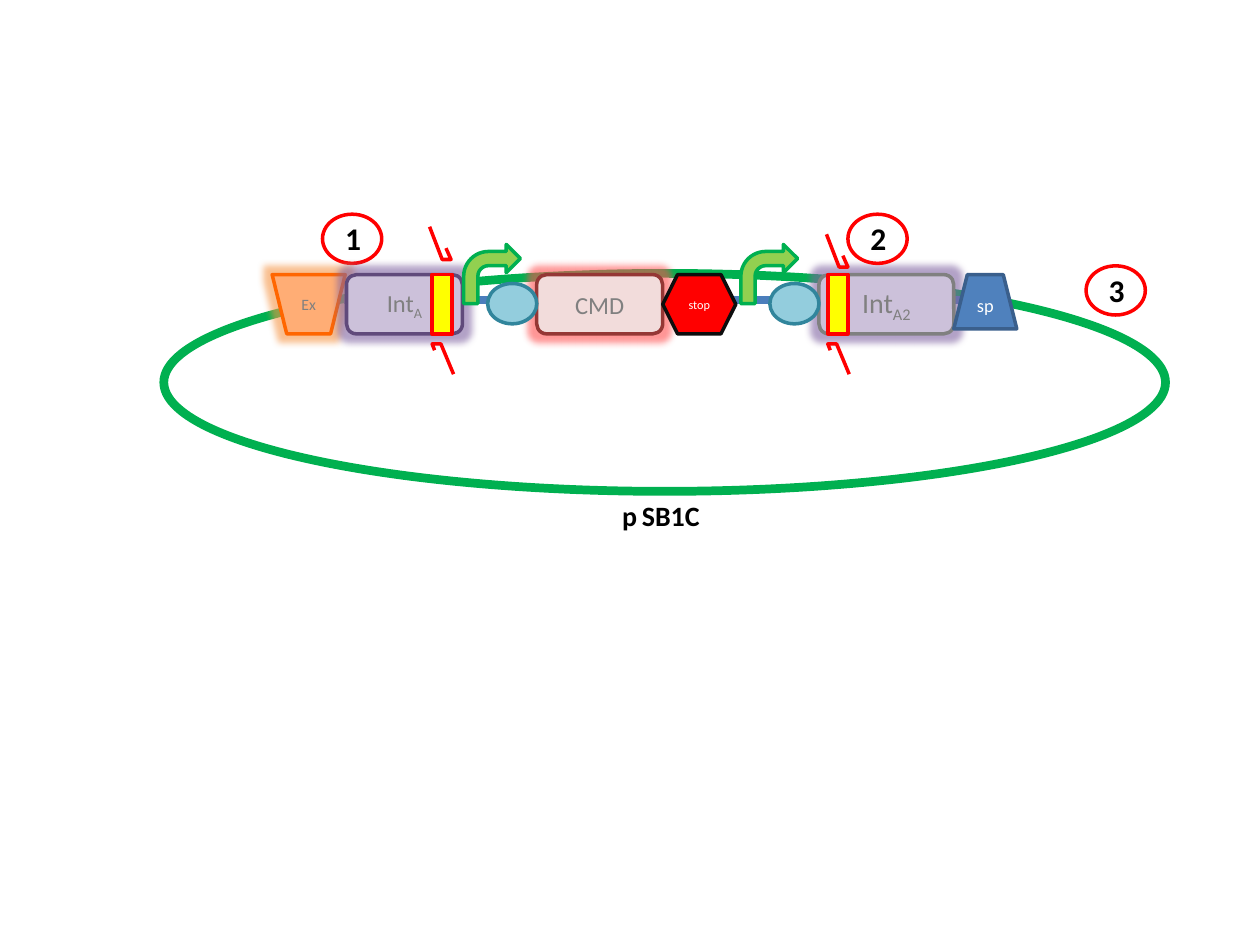
import pptx
import pptx.dml.color
import pptx.enum.shapes
import pptx.enum.text
import pptx.oxml.ns
import pptx.util
from dataclasses import dataclass
from typing import Optional
from lxml import etree

Inches = pptx.util.Inches
Kind = pptx.enum.shapes.MSO_SHAPE
FONT = "Calibri"
RED = "FF0000"
GREEN = "00B050"
GREY = "808080"
PURPLE = "8064A2"


@dataclass
class Part:
    kind: int
    left: float
    top: float
    width: float
    height: float
    fill: Optional[str]
    line: str
    text: str = ""
    subscript: str = ""
    size: float = 14
    color: str = GREY
    glow: Optional[str] = None
    line_width: float = 2


def rgb(value: str) -> pptx.dml.color.RGBColor:
    return pptx.dml.color.RGBColor.from_string(value)


def style_outline(shape, fill: Optional[str], line: str, width: float = 2) -> None:
    shape.shadow.inherit = False
    if fill:
        shape.fill.solid()
        shape.fill.fore_color.rgb = rgb(fill)
    else:
        shape.fill.background()
    shape.line.color.rgb = rgb(line)
    shape.line.width = pptx.util.Pt(width)


def style_font(font, size: float, color: str, bold: bool = False) -> None:
    font.name = FONT
    font.size = pptx.util.Pt(size)
    font.bold = bold
    font.color.rgb = rgb(color)


def add_glow(shape, color: str) -> None:
    qn = pptx.oxml.ns.qn
    effects = shape._element.spPr.find(qn("a:effectLst"))
    glow = etree.SubElement(effects, qn("a:glow"), rad="101600")
    tint = etree.SubElement(glow, qn("a:srgbClr"), val=color)
    etree.SubElement(tint, qn("a:alpha"), val="60000")


def add_part(page, part: Part) -> None:
    shape = page.shapes.add_shape(part.kind, Inches(part.left), Inches(part.top),
                                  Inches(part.width), Inches(part.height))
    style_outline(shape, part.fill, part.line, part.line_width)
    if part.glow:
        add_glow(shape, part.glow)
    if not part.text:
        return
    frame = shape.text_frame
    frame.word_wrap = False
    frame.vertical_anchor = pptx.enum.text.MSO_ANCHOR.MIDDLE
    para = frame.paragraphs[0]
    para.alignment = pptx.enum.text.PP_ALIGN.CENTER
    style_font(para.font, part.size, part.color)
    para.add_run().text = part.text
    if part.subscript:
        span = para.add_run()
        span.text = part.subscript
        span.font._element.set("baseline", "-25000")


def add_label(page, left: float, top: float, width: float, height: float,
              spans: list[tuple[str, float]]) -> None:
    box = page.shapes.add_textbox(Inches(left), Inches(top), Inches(width), Inches(height))
    box.text_frame.word_wrap = True
    para = box.text_frame.paragraphs[0]
    for text, size in spans:
        span = para.add_run()
        span.text = text
        style_font(span.font, size, "000000", bold=True)


def add_badge(page, number: int, left: float, top: float) -> None:
    add_label(page, left + 0.08, top - 0.01, 0.63, 0.4, [(str(number), 18)])
    add_part(page, Part(Kind.OVAL, left, top, 0.47, 0.39, None, RED))


def add_primer(page, left: float, top: float, points: list[tuple[float, float]]) -> None:
    corners = [(Inches(left + x), Inches(top + y)) for x, y in points]
    builder = page.shapes.build_freeform(*corners[0])
    builder.add_line_segments(corners[1:], close=False)
    style_outline(builder.convert_to_shape(), None, RED)


def add_backbone(page) -> None:
    add_part(page, Part(Kind.OVAL, 1.3, 2.17, 7.95, 1.73, None, GREEN, line_width=5))
    line = page.shapes.add_connector(pptx.enum.shapes.MSO_CONNECTOR.STRAIGHT,
                                     Inches(2.73), Inches(2.38), Inches(7.82), Inches(2.38))
    line.line.color.rgb = rgb("4B7EBC")
    line.line.width = pptx.util.Pt(4.75)
    etree.SubElement(line._element.spPr, pptx.oxml.ns.qn("a:effectLst"))


ROW_TOP, ROW_HEIGHT = 2.18, 0.47


def promoter(left: float) -> Part:
    return Part(Kind.BENT_ARROW, left, 1.94, 0.45, 0.47, "92D050", GREEN)


def binding_site(left: float) -> Part:
    return Part(Kind.OVAL, left, 2.25, 0.39, 0.32, "93CDDD", "31859C")


def primer_site(left: float) -> Part:
    return Part(Kind.RECTANGLE, left, ROW_TOP, 0.16, ROW_HEIGHT, "FFFF00", RED)


# Genetic parts, from back to front
RIGHT_END = [
    Part(Kind.ROUNDED_RECTANGLE, 6.5, ROW_TOP, 1.07, ROW_HEIGHT, "CCC1DA", GREY,
         "Int", "A2", size=16, glow=PURPLE),
    Part(Kind.TRAPEZOID, 7.57, ROW_TOP, 0.5, 0.43, "4F81BD", "3A5F8C",
         "sp", size=10.5, color="FFFFFF"),
]
CASSETTE = [
    Part(Kind.FLOWCHART_MANUAL_OPERATION, 2.16, ROW_TOP, 0.58, ROW_HEIGHT, "FFAD75", "FF6600",
         "Ex", size=9, glow="F79646"),
    Part(Kind.ROUNDED_RECTANGLE, 2.75, ROW_TOP, 0.92, ROW_HEIGHT, "CCC1DA", "604A7B",
         "Int", "A", glow=PURPLE),
    promoter(3.68),
    Part(Kind.ROUNDED_RECTANGLE, 4.26, ROW_TOP, 1, ROW_HEIGHT, "F2DCDB", "953735",
         "CMD", glow="FF5050"),
    Part(Kind.HEXAGON, 5.26, ROW_TOP, 0.58, ROW_HEIGHT, RED, "0D0D0D",
         "stop", size=7, color="FFFFFF"),
    binding_site(3.87),
    promoter(5.88),
    binding_site(6.11),
]
BADGES = [(2.56, 1.7), (6.73, 1.7), (8.62, 2.11)]
FORWARD = [(0, 0), (0.1, 0.26), (0.17, 0.26), (0.13, 0.17)]
REVERSE = [(0.17, 0.24), (0.07, 0), (0, 0), (0.02, 0.05)]


def main() -> None:
    deck = pptx.Presentation()
    deck.slide_width, deck.slide_height = Inches(10), Inches(7.5)
    page = deck.slides.add_slide(deck.slide_layouts[6])

    # Plasmid ring, parts and numbers
    add_backbone(page)
    for part in RIGHT_END:
        add_part(page, part)
    for number, (left, top) in enumerate(BADGES, start=1):
        add_badge(page, number, left, top)
    for part in CASSETTE:
        add_part(page, part)
    add_label(page, 4.84, 3.91, 0.87, 0.37, [("p", 16), (" ", 12), ("SB1C", 16)])

    # Primer sites with their half arrows
    for left in (3.43, 6.57):
        add_part(page, primer_site(left))
    for left, top in ((3.41, 1.8), (6.56, 1.86)):
        add_primer(page, left, top, FORWARD)
    for left in (3.43, 6.57):
        add_primer(page, left, 2.73, REVERSE)

    deck.save("out.pptx")


if __name__ == "__main__":
    main()
